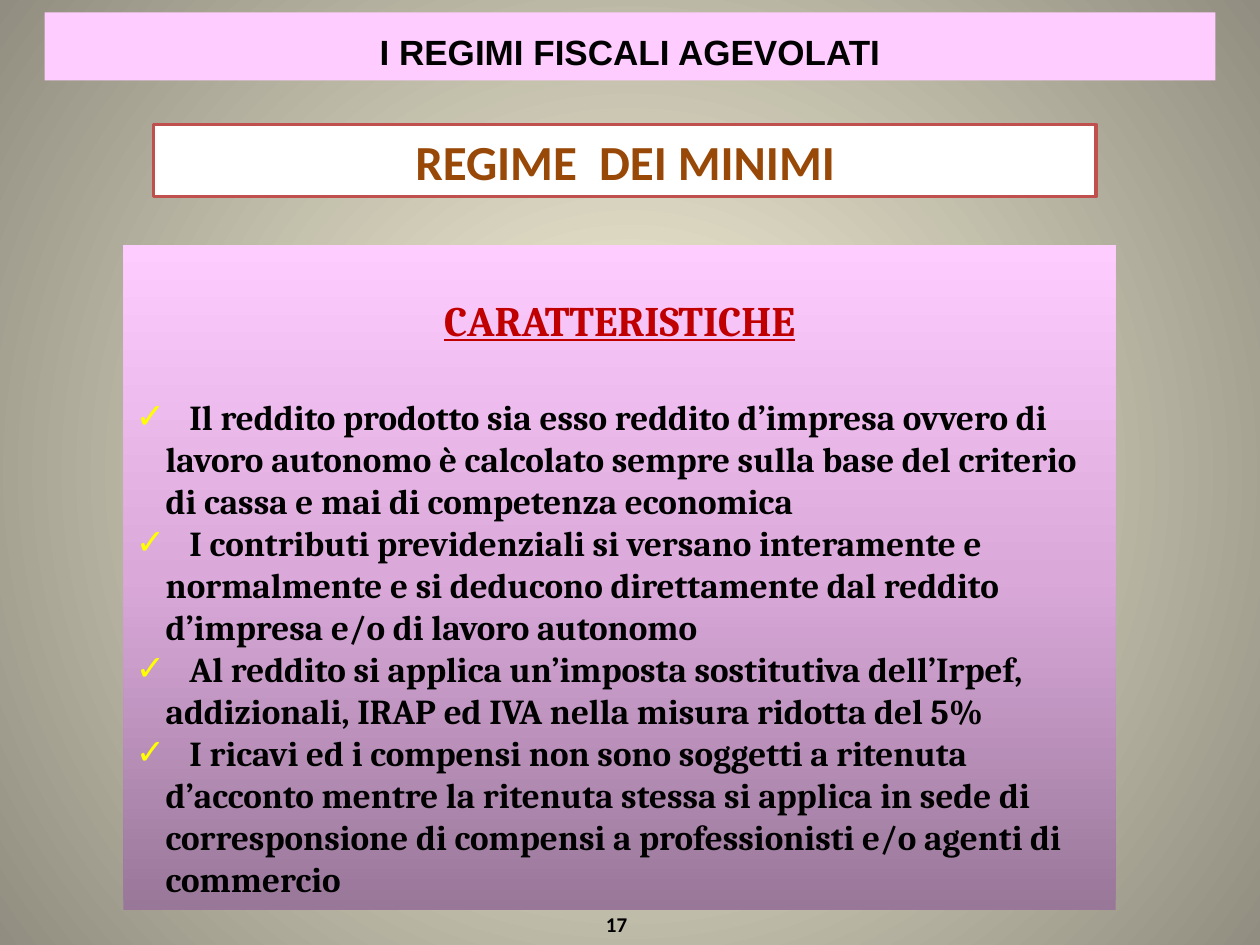
from lxml.etree import SubElement
from pptx import Presentation
from pptx.dml.color import RGBColor
from pptx.enum.shapes import MSO_SHAPE
from pptx.enum.text import MSO_ANCHOR, PP_ALIGN
from pptx.oxml import parse_xml
from pptx.oxml.ns import nsdecls, qn
from pptx.util import Cm, Pt

# Content
TITLE = "I REGIMI FISCALI AGEVOLATI"
SUBTITLE = "REGIME  DEI MINIMI"
HEADING = "CARATTERISTICHE"
FEATURES = [
    "Il reddito prodotto sia esso reddito d’impresa ovvero di lavoro autonomo è calcolato "
    "sempre sulla base del criterio di cassa e mai di competenza economica",
    "I contributi previdenziali si versano interamente e normalmente e si deducono "
    "direttamente dal reddito d’impresa e/o di lavoro autonomo",
    "Al reddito si applica un’imposta sostitutiva dell’Irpef, addizionali, IRAP ed IVA "
    "nella misura ridotta del 5%",
    "I ricavi ed i compensi non sono soggetti a ritenuta d’acconto mentre la ritenuta stessa "
    "si applica in sede di corresponsione di compensi a professionisti e/o agenti di commercio",
]
PAGE_NUMBER = "17"

COLORS = {
    "black": "000000", "white": "FFFFFF", "pink": "FFCCFF", "orchid": "DAA9DA",
    "plum": "997799", "brown": "984807", "red": "C00000", "border": "C0504D",
    "yellow": "FFFF00", "cream": "FCF7DD", "olive": "918E81",
}
RADIAL = ('<a:path path="circle"><a:fillToRect l="50000" t="50000" r="50000" b="50000"/>'
          '</a:path>')
UPWARD = '<a:lin ang="16200000" scaled="0"/>'
BULLET_INDENT = Cm(0.6)
FIRST_LINE_TAB = Cm(1.08)


def color(name):
    return RGBColor.from_string(COLORS[name])


def set_gradient(parent, fill, names, direction):
    """Spread the named colours evenly along a gradient."""
    fill.gradient()
    stops = "".join(
        f'<a:gs pos="{100000 * i // (len(names) - 1)}"><a:srgbClr val="{COLORS[name]}"/></a:gs>'
        for i, name in enumerate(names))
    gradient = parent.find(qn("a:gradFill"))
    parent.replace(gradient, parse_xml(
        f'<a:gradFill {nsdecls("a")} rotWithShape="1"><a:gsLst>{stops}</a:gsLst>'
        f'{direction}</a:gradFill>'))


def add_text(frame, text, font="Calibri", size=20, ink="black", align=PP_ALIGN.CENTER,
             underline=False, line=None, after=0, first=True):
    para = frame.paragraphs[0] if first else frame.add_paragraph()
    para.alignment = align
    para.space_before, para.space_after = Pt(0), Pt(after)
    if line:
        para.line_spacing = Pt(line)
    span = para.add_run()
    span.text = text
    span.font.name, span.font.size, span.font.bold = font, Pt(size), True
    span.font.underline = underline
    span.font.color.rgb = color(ink)
    return para


def add_check(para):
    """Hang a yellow check mark and set the tab for the first line."""
    props = para._p.get_or_add_pPr()
    props.set("marL", str(BULLET_INDENT))
    props.set("indent", str(-BULLET_INDENT))
    bullet_color = SubElement(props, qn("a:buClr"))
    SubElement(bullet_color, qn("a:srgbClr"), val=COLORS["yellow"])
    SubElement(props, qn("a:buFont"), typeface="Arial")
    SubElement(props, qn("a:buChar"), char="✓")
    tabs = SubElement(props, qn("a:tabLst"))
    SubElement(tabs, qn("a:tab"), pos=str(FIRST_LINE_TAB), algn="l")


def prepare(frame, anchor, side=0.25, top=0.13):
    frame.word_wrap = True
    frame.vertical_anchor = anchor
    frame.margin_left = frame.margin_right = Cm(side)
    frame.margin_top, frame.margin_bottom = Cm(top), Cm(0.13)
    return frame


def add_box(page, left, top, width, height):
    box = page.shapes.add_shape(MSO_SHAPE.RECTANGLE, Cm(left), Cm(top), Cm(width), Cm(height))
    box.shadow.inherit = False
    box.line.fill.background()
    return box


def main():
    deck = Presentation()
    deck.slide_width, deck.slide_height = Cm(25.4), Cm(19.05)
    page = deck.slides.add_slide(deck.slide_layouts[5])
    background = page.background.fill
    background.solid()
    set_gradient(page._element.cSld.bg.bgPr, background, ["cream", "olive"], RADIAL)

    # Title band
    title = page.shapes.title
    title.left, title.top, title.width, title.height = Cm(0.9), Cm(0.25), Cm(23.6), Cm(1.37)
    title.fill.solid()
    title.fill.fore_color.rgb = color("pink")
    frame = prepare(title.text_frame, MSO_ANCHOR.TOP, side=0.3, top=0.15)
    add_text(frame, TITLE, font="Arial", line=30)

    # Page number
    number = page.shapes.add_textbox(Cm(11.91), Cm(18.31), Cm(1.04), Cm(0.66))
    add_text(prepare(number.text_frame, MSO_ANCHOR.MIDDLE, side=0), PAGE_NUMBER, size=12)

    # Subtitle box
    subtitle = add_box(page, 3.1, 2.51, 19, 1.45)
    subtitle.fill.solid()
    subtitle.fill.fore_color.rgb = color("white")
    subtitle.line.color.rgb = color("border")
    subtitle.line.width = Pt(2)
    add_text(prepare(subtitle.text_frame, MSO_ANCHOR.MIDDLE), SUBTITLE, size=28, ink="brown")

    # Features panel
    panel = add_box(page, 2.49, 4.93, 20, 13.41)
    set_gradient(panel._element.spPr, panel.fill, ["plum", "orchid", "pink"], UPWARD)
    frame = prepare(panel.text_frame, MSO_ANCHOR.TOP, top=1)
    add_text(frame, HEADING, font="Cambria", size=24, ink="red", underline=True, after=29)
    for feature in FEATURES:
        add_check(add_text(frame, "\t" + feature, font="Cambria", align=PP_ALIGN.LEFT,
                           first=False))

    deck.save("out.pptx")


if __name__ == "__main__":
    main()
